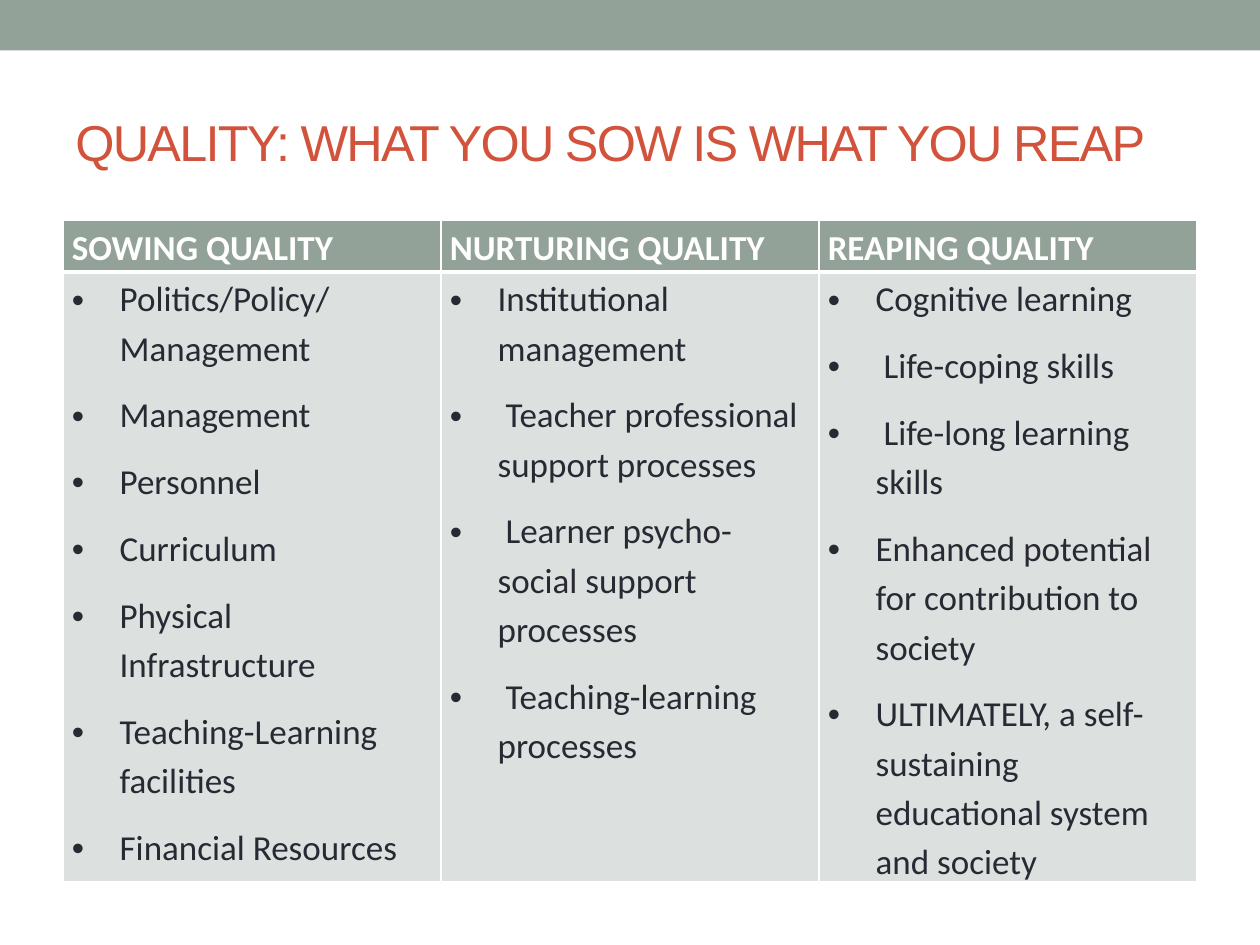
import pptx
import pptx.dml.color
import pptx.enum.shapes
import pptx.enum.text
import pptx.oxml.ns
import pptx.util
from lxml import etree
from pptx.util import Inches

COLORS = {
    "sage": "93A299",
    "pale": "DCE0DE",
    "rust": "D2533C",
    "ink": "292934",
    "white": "FFFFFF",
}

COLUMNS = {
    "SOWING QUALITY": [
        "Politics/Policy/Management",
        "Management",
        "Personnel",
        "Curriculum",
        "Physical Infrastructure",
        "Teaching-Learning facilities",
        "Financial Resources",
    ],
    "NURTURING QUALITY": [
        "Institutional management",
        " Teacher professional support processes",
        " Learner psycho-social support processes",
        " Teaching-learning processes",
    ],
    "REAPING QUALITY": [
        "Cognitive learning",
        " Life-coping skills",
        " Life-long learning skills",
        "Enhanced potential for contribution to society",
        "ULTIMATELY, a self-sustaining educational system and society",
    ],
}


def rgb(name):
    return pptx.dml.color.RGBColor.from_string(COLORS[name])


def qn(tag):
    return pptx.oxml.ns.qn(tag)


def style_run(run, font, size, color, bold=False):
    run.font.name = font
    run.font.size = pptx.util.Pt(size)
    run.font.bold = bold
    run.font.color.rgb = rgb(color)


def add_band(slide):
    band = slide.shapes.add_shape(
        pptx.enum.shapes.MSO_SHAPE.RECTANGLE, 0, 0, Inches(10), Inches(0.4))
    band.shadow.inherit = False
    band.fill.solid()
    band.fill.fore_color.rgb = rgb("sage")
    band.line.fill.background()


def add_title(slide, words):
    title = slide.shapes.add_textbox(
        Inches(0.5), Inches(0.58), Inches(9), Inches(1.08))
    frame = title.text_frame
    frame.word_wrap = True
    frame.vertical_anchor = pptx.enum.text.MSO_ANCHOR.MIDDLE
    frame.text = words
    run = frame.paragraphs[0].runs[0]
    style_run(run, "Arial", 28.8, "rust")
    run._r.get_or_add_rPr().set("spc", "-100")


def set_borders(cell, **widths):
    properties = cell._tc.get_or_add_tcPr()
    for place, side in enumerate("LRTB"):
        width = pptx.util.Pt(widths.get(side, 1))
        line = etree.Element(qn(f"a:ln{side}"), w=str(width))
        fill = etree.SubElement(line, qn("a:solidFill"))
        etree.SubElement(fill, qn("a:srgbClr"), val=COLORS["white"])
        properties.insert(place, line)


def add_bullet(paragraph):
    properties = paragraph._p.get_or_add_pPr()
    indent = Inches(0.38)
    properties.set("marL", str(indent))
    properties.set("indent", str(-indent))
    etree.SubElement(properties, qn("a:buFont"), typeface="Arial")
    etree.SubElement(properties, qn("a:buChar"), char="•")


def fill_cell(cell, lines, fill, color, heading=False):
    cell.margin_left = cell.margin_right = Inches(0.07)
    cell.margin_top = cell.margin_bottom = 0
    cell.fill.solid()
    cell.fill.fore_color.rgb = rgb(fill)
    cell.text_frame.text = "\n".join(lines)
    for paragraph in cell.text_frame.paragraphs:
        paragraph.line_spacing = 1.15
        paragraph.space_after = pptx.util.Pt(10)
        if not heading:
            add_bullet(paragraph)
        style_run(paragraph.runs[0], "Calibri", 20, color, heading)


def add_quality_table(slide, columns):
    table = slide.shapes.add_table(
        2, len(columns), Inches(0.5), Inches(1.75), Inches(9), Inches(5.25)).table
    table.rows[0].height = Inches(0.41)
    table.rows[1].height = Inches(4.84)
    for index, (heading, points) in enumerate(columns.items()):
        table.columns[index].width = Inches(3)
        head, body = table.cell(0, index), table.cell(1, index)
        fill_cell(head, [heading], "sage", "white", heading=True)
        fill_cell(body, points, "pale", "ink")
        set_borders(head, B=3)
        set_borders(body, T=3)


def main():
    deck = pptx.Presentation()
    deck.slide_width, deck.slide_height = Inches(10), Inches(7.5)
    slide = deck.slides.add_slide(deck.slide_layouts[6])
    add_band(slide)
    add_title(slide, "QUALITY: WHAT YOU SOW IS WHAT YOU REAP")
    add_quality_table(slide, COLUMNS)
    deck.save("out.pptx")


if __name__ == "__main__":
    main()
